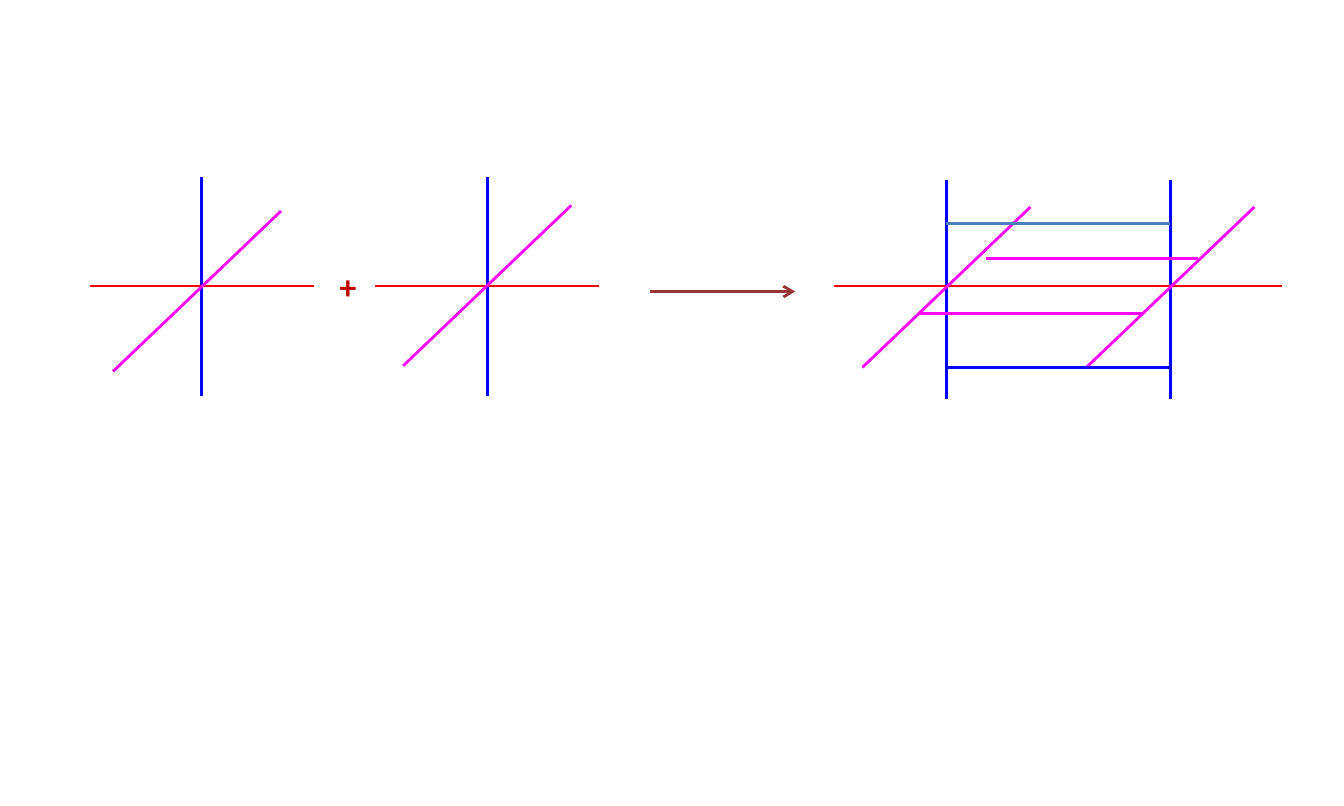
import dataclasses

import pptx
import pptx.dml.color
import pptx.enum.shapes
import pptx.enum.text
import pptx.oxml.ns
import pptx.slide
import pptx.util
from lxml import etree


@dataclasses.dataclass(frozen=True)
class Theme:
    blue: str = "0000FF"
    red: str = "FF0000"
    magenta: str = "FF00FF"
    steel: str = "4B7EBC"
    brown: str = "953735"
    plus: str = "C00000"
    font: str = "Calibri"
    text_size: float = 18
    line_width: float = 1.5


@dataclasses.dataclass(frozen=True)
class Line:
    start: tuple[float, float]
    end: tuple[float, float]
    color: str
    arrow: bool = False


@dataclasses.dataclass(frozen=True)
class Axes:
    center: float
    stem_top: float
    slant_left: float
    slant_top: float


THEME = Theme()
WIDTH, HEIGHT = pptx.util.Inches(10), pptx.util.Inches(6)
COLUMNS, ROWS = 240, 144
AXIS_ROW = 51.1
ARM, STEM = 20, 39
SLANT_WIDTH, SLANT_HEIGHT = 30, 28.65

LEFT_CENTER, RIGHT_CENTER = 169, 209
AXES = [
    Axes(36, 31.7, 20.2, 37.7),
    Axes(87, 31.7, 72, 36.7),
    Axes(LEFT_CENTER, 32.2, 154, 37),
    Axes(RIGHT_CENTER, 32.2, 194, 37),
]
ARROW = Line((116, 52.1), (142, 52.1), THEME.brown, arrow=True)
LINKS = [
    Line((LEFT_CENTER, 40), (RIGHT_CENTER, 40), THEME.steel),
    Line((LEFT_CENTER, 65.7), (RIGHT_CENTER, 65.7), THEME.blue),
    Line((176, 46.2), (214, 46.2), THEME.magenta),
    Line((164, 56), (204, 56), THEME.magenta),
]


def across(columns: float) -> int:
    """Convert grid columns to a slide length."""
    return round(WIDTH * columns / COLUMNS)


def down(rows: float) -> int:
    """Convert grid rows to a slide length."""
    return round(HEIGHT * rows / ROWS)


def draw_line(page: pptx.slide.Slide, line: Line) -> None:
    """Draw one straight line, with an arrowhead if asked."""
    connector = page.shapes.add_connector(
        pptx.enum.shapes.MSO_CONNECTOR.STRAIGHT,
        across(line.start[0]), down(line.start[1]),
        across(line.end[0]), down(line.end[1]),
    )
    connector.line.color.rgb = pptx.dml.color.RGBColor.from_string(line.color)
    connector.line.width = pptx.util.Pt(THEME.line_width)
    if line.arrow:
        stroke = connector.line._get_or_add_ln()
        etree.SubElement(stroke, pptx.oxml.ns.qn("a:tailEnd"), type="arrow")
    etree.SubElement(connector._element.spPr, pptx.oxml.ns.qn("a:effectLst"))


def draw_axes(page: pptx.slide.Slide, axes: Axes) -> None:
    """Draw three crossing axes: upright, level and slanted."""
    center, slant_left, slant_top = axes.center, axes.slant_left, axes.slant_top
    for line in (
        Line((center, axes.stem_top), (center, axes.stem_top + STEM), THEME.blue),
        Line((center + ARM, AXIS_ROW), (center - ARM, AXIS_ROW), THEME.red),
        Line((slant_left + SLANT_WIDTH, slant_top),
             (slant_left, slant_top + SLANT_HEIGHT), THEME.magenta),
    ):
        draw_line(page, line)


def draw_text(page: pptx.slide.Slide, text: str, *, left: float, top: float,
              width: float, height: float, color: str, size: float,
              bold: bool = False) -> None:
    """Place one line of formatted text on the grid."""
    box = page.shapes.add_textbox(across(left), down(top), across(width), down(height))
    box.text_frame.word_wrap = True
    box.text_frame.auto_size = pptx.enum.text.MSO_AUTO_SIZE.SHAPE_TO_FIT_TEXT
    para = box.text_frame.paragraphs[0]
    span = para.add_run()
    span.text = text
    span.font.name = THEME.font
    span.font.size = pptx.util.Pt(size)
    span.font.bold = bold
    span.font.color.rgb = pptx.dml.color.RGBColor.from_string(color)


def main() -> None:
    """Build and save the deck."""
    deck = pptx.Presentation()
    deck.slide_width, deck.slide_height = WIDTH, HEIGHT
    page = deck.slides.add_slide(deck.slide_layouts[6])
    for axes in AXES:
        draw_axes(page, axes)
    draw_line(page, ARROW)
    draw_text(page, "+", left=58.3, top=46.3, width=11.5, height=9.6,
              color=THEME.plus, size=THEME.text_size, bold=True)
    for link in LINKS:
        draw_line(page, link)
    deck.save("out.pptx")


if __name__ == "__main__":
    main()
